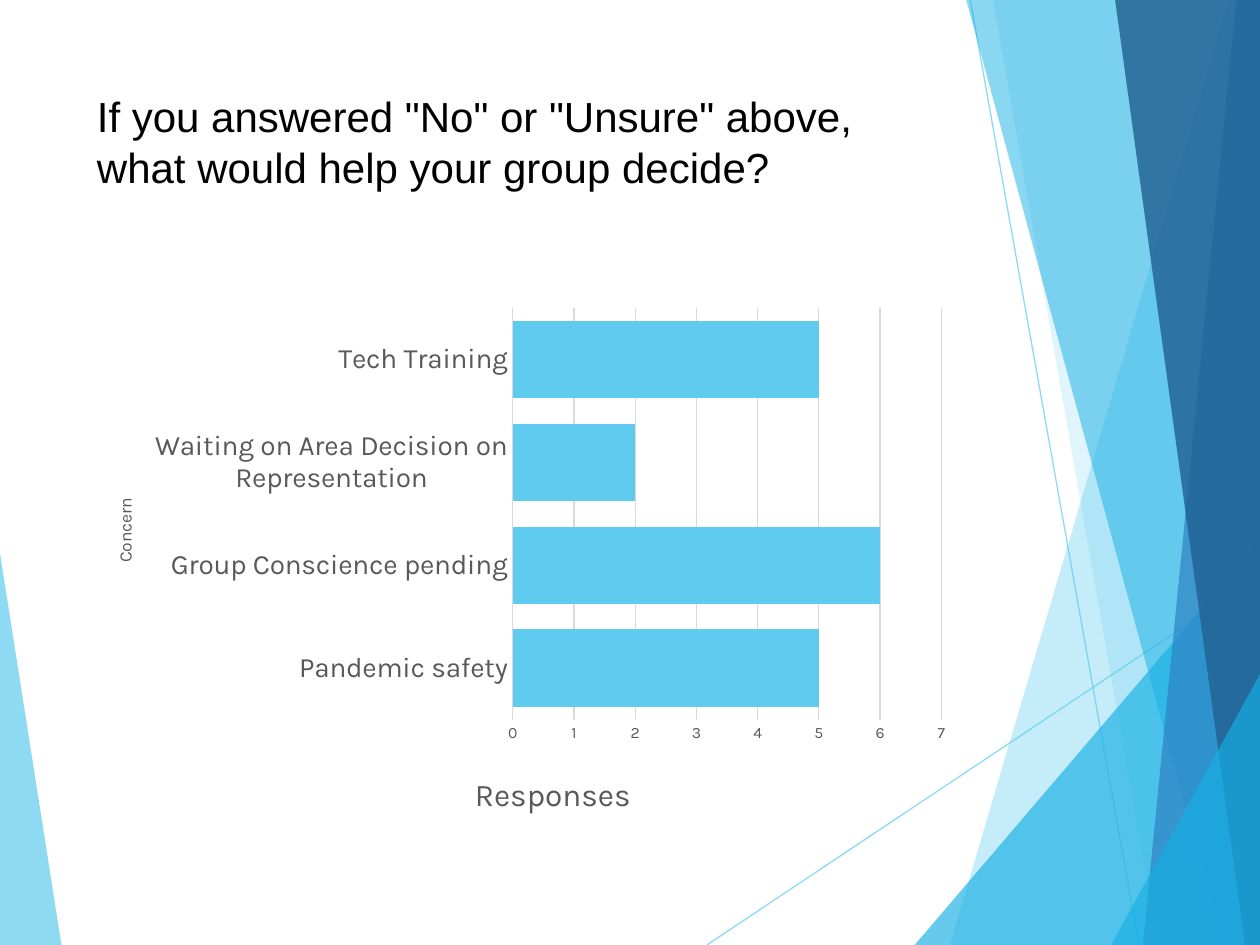
from dataclasses import dataclass

from lxml import etree
from pptx import Presentation
from pptx import util as u
from pptx.chart import data as chart_data
from pptx.dml.color import RGBColor
from pptx.enum import chart as chart_enum, shapes, text
from pptx.oxml import ns

WIDTH, HEIGHT = 25.4, 19.05


@dataclass(frozen=True)
class Theme:
    sky: str = "5FCBEF"
    cyan: str = "17B0E4"
    blue: str = "2E83C3"
    navy: str = "226292"
    ink: str = "000000"
    label: str = "595959"
    grid: str = "D9D9D9"
    title_font: str = "Arial"
    chart_font: str = "Karla"
    title_size: int = 24
    value_title_size: int = 18
    category_size: int = 16
    category_title_size: int = 10
    tick_size: int = 9
    line_width: float = 0.75


def apply(target, values):
    for name, value in values.items():
        setattr(target, name, value)


def set_alpha(color_format_parent, percent):
    """Make the solid colour inside an XML element partly transparent."""
    color = color_format_parent.find(".//" + ns.qn("a:srgbClr"))
    etree.SubElement(color, ns.qn("a:alpha")).set("val", str(percent * 1000))


def set_layout(element, index, **fractions):
    """Place a chart part by fractions of the chart's size."""
    layout = element.find(ns.qn("c:layout"))
    if layout is None:
        layout = etree.Element(ns.qn("c:layout"))
        element.insert(index, layout)
    manual = etree.SubElement(layout, ns.qn("c:manualLayout"))
    settings = {"xMode": "edge", "yMode": "edge", **fractions}
    if "w" in fractions:
        settings = {"layoutTarget": "inner", **settings}
    for name, value in settings.items():
        etree.SubElement(manual, ns.qn("c:" + name)).set("val", str(value))


class SlideBuilder:
    def __init__(self, slide, theme):
        self.slide = slide
        self.theme = theme

    def style_font(self, font, size, color, name):
        apply(font, {"size": u.Pt(size), "name": name, "bold": False})
        font.color.rgb = RGBColor.from_string(color)

    def style_line(self, line, color):
        line.width = u.Pt(self.theme.line_width)
        line.color.rgb = RGBColor.from_string(color)

    def polygon(self, points, color, alpha):
        corners = [(u.Cm(x), u.Cm(y)) for x, y in points]
        builder = self.slide.shapes.build_freeform(*corners[0])
        builder.add_line_segments(corners[1:], close=True)
        shape = builder.convert_to_shape()
        shape.shadow.inherit = False
        shape.fill.solid()
        shape.fill.fore_color.rgb = RGBColor.from_string(color)
        set_alpha(shape._element.spPr, alpha)
        shape.line.fill.background()

    def panel(self, top_x, bottom_x, color, alpha):
        """Full-height band from a slanted left side to the right slide edge."""
        self.polygon([(top_x, 0), (bottom_x, HEIGHT), (WIDTH, HEIGHT), (WIDTH, 0)],
                     color, alpha)

    def wedge(self, bottom_x, right_y, color, alpha):
        """Triangle in the bottom right corner."""
        self.polygon([(bottom_x, HEIGHT), (WIDTH, right_y), (WIDTH, HEIGHT)],
                     color, alpha)

    def line(self, start, end, color, alpha):
        connector = self.slide.shapes.add_connector(
            shapes.MSO_CONNECTOR.STRAIGHT, *map(u.Cm, start + end))
        self.style_line(connector.line, color)
        properties = connector._element.spPr
        set_alpha(properties, alpha)
        etree.SubElement(properties, ns.qn("a:effectLst"))

    def title(self, wording, left, top, width, height):
        shape = self.slide.shapes.title
        apply(shape, {"left": u.Cm(left), "top": u.Cm(top),
                      "width": u.Cm(width), "height": u.Cm(height)})
        frame = shape.text_frame
        frame.text = wording
        apply(frame, {"word_wrap": True, "auto_size": text.MSO_AUTO_SIZE.NONE,
                      "vertical_anchor": text.MSO_ANCHOR.TOP})
        paragraph = frame.paragraphs[0]
        paragraph.alignment = text.PP_ALIGN.LEFT
        theme = self.theme
        self.style_font(paragraph.runs[0].font, theme.title_size, theme.ink,
                        theme.title_font)

    def axis(self, axis, wording, title_size, label_size, x, y):
        theme = self.theme
        frame = axis.axis_title.text_frame
        frame.text = wording
        self.style_font(frame.paragraphs[0].runs[0].font, title_size, theme.label,
                        theme.chart_font)
        set_layout(axis.axis_title._element, 1, x=x, y=y)
        self.style_font(axis.tick_labels.font, label_size, theme.label,
                        theme.chart_font)
        none = chart_enum.XL_TICK_MARK.NONE
        apply(axis, {"major_tick_mark": none, "minor_tick_mark": none})
        return frame

    def bar_chart(self, answers, left, top, width, height):
        theme = self.theme
        data = chart_data.CategoryChartData()
        data.categories = list(answers)
        data.add_series("Series 1", list(answers.values()))
        chart = self.slide.shapes.add_chart(
            chart_enum.XL_CHART_TYPE.BAR_CLUSTERED,
            *map(u.Cm, (left, top, width, height)), data).chart
        apply(chart, {"has_legend": False, "has_title": False})
        self.style_font(chart.font, theme.category_title_size, theme.ink,
                        theme.chart_font)

        plot = chart.plots[0]
        apply(plot, {"gap_width": 33, "overlap": -30, "vary_by_categories": False})
        fill = plot.series[0].format.fill
        fill.solid()
        fill.fore_color.rgb = RGBColor.from_string(theme.sky)
        plot_area = chart._chartSpace.find(".//" + ns.qn("c:plotArea"))
        set_layout(plot_area, 0, x=0.49, y=0.02, w=0.49, h=0.77)

        categories, values = chart.category_axis, chart.value_axis
        frame = self.axis(categories, "Concern", theme.category_title_size,
                          theme.category_size, 0.03, 0.37)
        frame._txBody.bodyPr.set("rot", "-5400000")
        categories.has_major_gridlines = False
        self.style_line(categories.format.line, theme.grid)

        self.axis(values, "Responses", theme.value_title_size, theme.tick_size,
                  0.44, 0.88)
        apply(values, {"minimum_scale": 0, "maximum_scale": 7, "major_unit": 1,
                       "has_major_gridlines": True})
        values.format.line.fill.background()
        self.style_line(values.major_gridlines.format.line, theme.grid)


def main():
    presentation = Presentation()
    apply(presentation, {"slide_width": u.Cm(WIDTH), "slide_height": u.Cm(HEIGHT)})
    theme = Theme()
    title_only = presentation.slide_layouts[5]
    builder = SlideBuilder(presentation.slides.add_slide(title_only), theme)

    builder.polygon([(0, 11.15), (1.24, HEIGHT), (0, HEIGHT)], theme.sky, 70)
    builder.line((14.25, HEIGHT), (WIDTH, 11.61), theme.sky, 70)
    builder.line((19.56, 0), (22.96, HEIGHT), theme.sky, 70)
    builder.panel(24.77, 19.15, theme.sky, 36)
    builder.panel(20.02, 23.34, theme.sky, 20)
    builder.wedge(18.44, 10.9, theme.cyan, 66)
    builder.panel(19.48, 24.64, theme.cyan, 50)
    builder.panel(24.92, 23.04, theme.blue, 70)
    builder.panel(22.48, 25.1, theme.navy, 82)
    builder.wedge(22.4, 13.59, theme.cyan, 66)

    builder.title('If you answered "No" or "Unsure" above, '
                  "what would help your group decide?", 1.7, 1.7, 17.63, 3.66)
    answers = {"Pandemic safety": 5, "Group Conscience pending": 6,
               "Waiting on Area Decision on Representation": 2, "Tech Training": 5}
    builder.bar_chart(answers, 1.7, 6, 17.63, 10.77)
    presentation.save("out.pptx")


if __name__ == "__main__":
    main()
